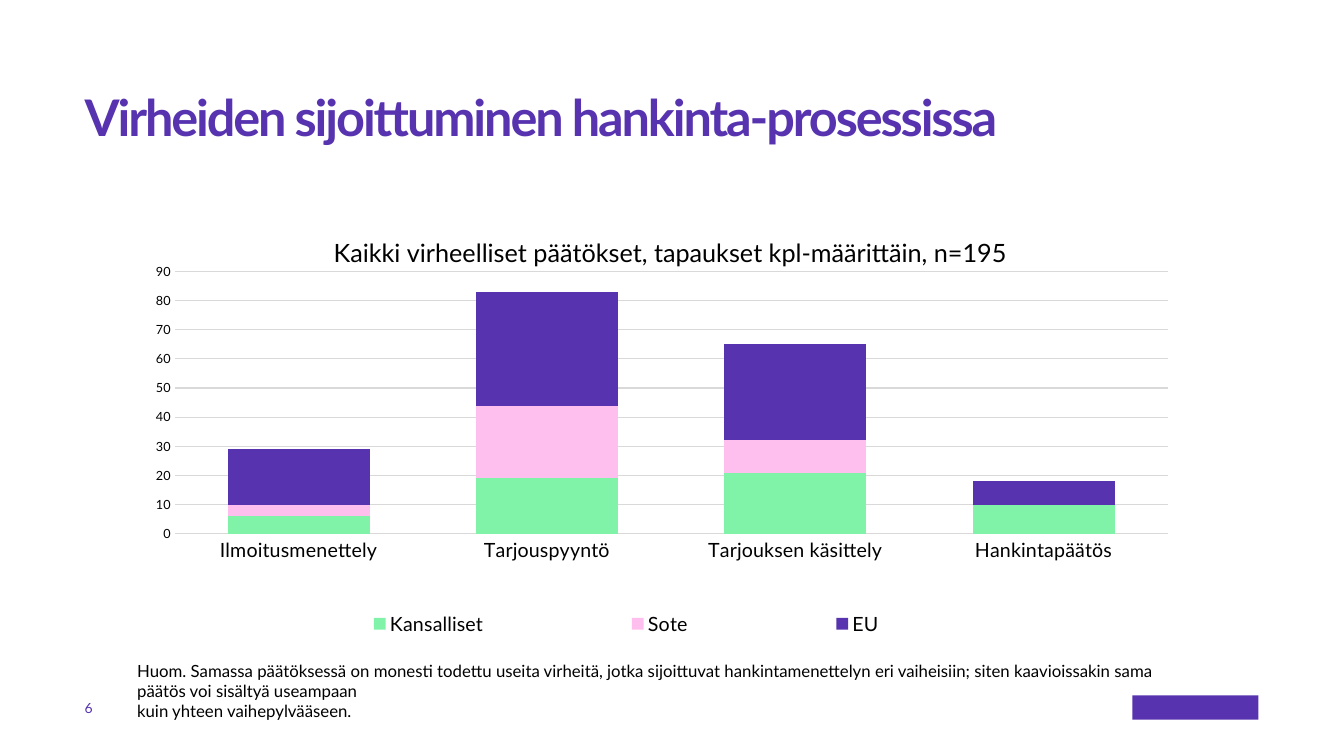
import pptx
import pptx.chart.data
import pptx.dml.color
import pptx.enum.chart
import pptx.enum.shapes
import pptx.enum.text
import pptx.oxml
import pptx.oxml.ns
import pptx.util
from pptx.util import Inches

COLORS = {"purple": "5733AF", "green": "81F3A9", "pink": "FFBFEE",
          "black": "000000", "grid": "D9D9D9"}
FONT = "Lato"


def style(font, size, color, bold=False):
    font.name = FONT
    font.size = pptx.util.Pt(size)
    font.bold = bold
    font.color.rgb = pptx.dml.color.RGBColor.from_string(COLORS[color])


def place(part, index, **values):
    """Give a chart part a fixed layout, as fractions of the chart."""
    for old in part.findall(pptx.oxml.ns.qn("c:layout")):
        part.remove(old)
    items = "".join(f'<c:{key} val="{value}"/>' for key, value in values.items())
    part.insert(index, pptx.oxml.parse_xml(
        f'<c:layout {pptx.oxml.ns.nsdecls("c")}><c:manualLayout>{items}'
        '</c:manualLayout></c:layout>'))


prs = pptx.Presentation()
prs.slide_width, prs.slide_height = Inches(13.33), Inches(7.5)
slide = prs.slides.add_slide(prs.slide_layouts[5])

# Texts: title, page number, note
title = slide.shapes.title
title.left, title.top, title.width, title.height = (
    Inches(0.84), Inches(0.92), Inches(11.66), Inches(0.63))
number = slide.shapes.add_textbox(Inches(0.84), Inches(6.9), Inches(0.47), Inches(0.24))
note = slide.shapes.add_textbox(Inches(1.36), Inches(6.55), Inches(10.32), Inches(0.39))
top, middle = pptx.enum.text.MSO_ANCHOR.TOP, pptx.enum.text.MSO_ANCHOR.MIDDLE
for sp, text, size, color, bold, anchor in [
    (title, "Virheiden sijoittuminen hankinta-prosessissa", 36, "purple", True, top),
    (number, "6", 10, "purple", False, middle),
    (note, "Huom. Samassa päätöksessä on monesti todettu useita virheitä, jotka "
           "sijoittuvat hankintamenettelyn eri vaiheisiin; siten kaavioissakin sama "
           "päätös voi sisältyä useampaan\vkuin yhteen vaihepylvääseen.",
     12, "black", False, top),
]:
    tf = sp.text_frame
    tf.margin_left = tf.margin_right = tf.margin_top = tf.margin_bottom = 0
    tf.word_wrap = True
    tf.auto_size = pptx.enum.text.MSO_AUTO_SIZE.NONE
    tf.vertical_anchor = anchor
    p = tf.paragraphs[0]
    p.text = text
    p.alignment = pptx.enum.text.PP_ALIGN.LEFT
    style(p.font, size, color, bold)
p = title.text_frame.paragraphs[0]
p.line_spacing = 0.9
p.runs[0].font._element.set("spc", "-150")

# Stacked column chart
data = pptx.chart.data.CategoryChartData()
data.categories = ["Ilmoitusmenettely", "Tarjouspyyntö", "Tarjouksen käsittely",
                   "Hankintapäätös"]
series_rows = [("Kansalliset", [6, 19, 21, 10], "green"),
               ("Sote", [4, 25, 11, 0], "pink"),
               ("EU", [19, 39, 33, 8], "purple")]
for name, values, _ in series_rows:
    data.add_series(name, values)
chart = slide.shapes.add_chart(
    pptx.enum.chart.XL_CHART_TYPE.COLUMN_STACKED,
    Inches(1.12), Inches(2.1), Inches(10.72), Inches(4.35), data).chart
style(chart.font, 10, "black")
plot = chart.plots[0]
plot.gap_width, plot.overlap = 75, 100
plot.vary_by_categories = False
for series, (_, _, color) in zip(plot.series, series_rows):
    series.format.fill.solid()
    series.format.fill.fore_color.rgb = pptx.dml.color.RGBColor.from_string(COLORS[color])

# Axes
cat_axis, val_axis = chart.category_axis, chart.value_axis
for axis, size in [(cat_axis, 14), (val_axis, 9)]:
    axis.major_tick_mark = axis.minor_tick_mark = pptx.enum.chart.XL_TICK_MARK.NONE
    style(axis.tick_labels.font, size, "black")
val_axis.minimum_scale, val_axis.maximum_scale, val_axis.major_unit = 0, 90, 10
val_axis.has_major_gridlines = True
val_axis.format.line.fill.background()
for line in (cat_axis.format.line, val_axis.major_gridlines.format.line):
    line.width = pptx.util.Pt(0.75)
    line.color.rgb = pptx.dml.color.RGBColor.from_string(COLORS["grid"])

# Chart title and legend
chart.has_title = True
p = chart.chart_title.text_frame.paragraphs[0]
p.text = "Kaikki virheelliset päätökset, tapaukset kpl-määrittäin, n=195"
style(p.font, 18, "black")
chart.has_legend = True
chart.legend.position = pptx.enum.chart.XL_LEGEND_POSITION.BOTTOM
chart.legend.include_in_layout = False
style(chart.legend.font, 14, "black")

# Places inside the chart
root = chart.element
place(root.xpath("c:chart/c:title")[0], 1, xMode="edge", yMode="edge", x=0.2, y=0.04)
place(root.xpath("c:chart/c:plotArea")[0], 0, layoutTarget="inner", xMode="edge",
      yMode="edge", x=0.057, y=0.136, w=0.919, h=0.599)
place(root.xpath("c:chart/c:legend")[0], 1, xMode="edge", yMode="edge",
      x=0.11, y=0.9, w=0.73, h=0.08)

# Plain mark in the corner
mark = slide.shapes.add_shape(pptx.enum.shapes.MSO_SHAPE.RECTANGLE,
                              Inches(11.23), Inches(6.9), Inches(1.25), Inches(0.24))
mark.shadow.inherit = False
mark.fill.solid()
mark.fill.fore_color.rgb = pptx.dml.color.RGBColor.from_string(COLORS["purple"])
mark.line.fill.background()

prs.save("out.pptx")
